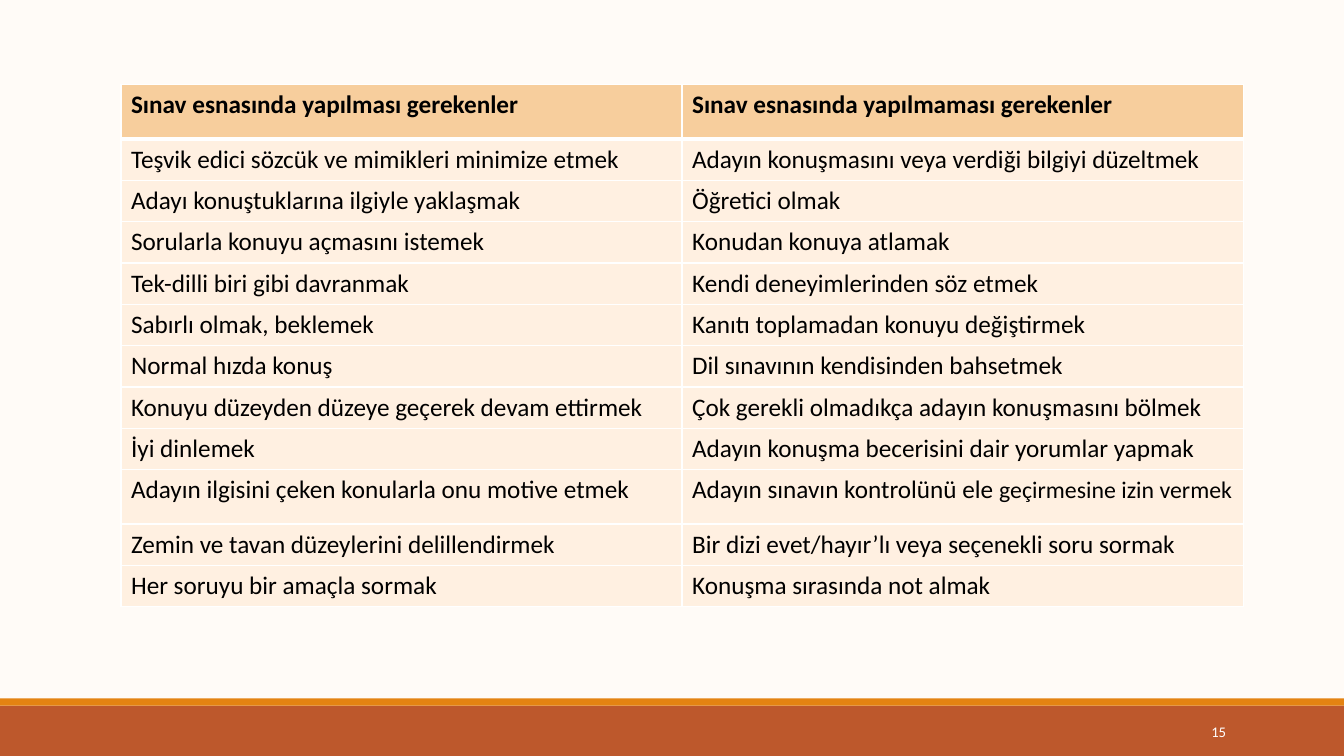
from dataclasses import dataclass

from lxml import etree
from pptx import Presentation
from pptx.dml.color import RGBColor
from pptx.enum.shapes import MSO_SHAPE
from pptx.enum.text import MSO_ANCHOR, PP_ALIGN
from pptx.oxml.ns import qn
from pptx.util import Inches, Pt

RECT = MSO_SHAPE.RECTANGLE
MIDDLE = MSO_ANCHOR.MIDDLE
RIGHT = PP_ALIGN.RIGHT


@dataclass(frozen=True)
class Theme:
    font: str = "Calibri"
    background: str = "FFFBF7"
    footer: str = "BD582C"
    accent: str = "E48312"
    header: str = "F7CE9D"
    body: str = "FFF0E1"
    ink: str = "000000"
    white: str = "FFFFFF"
    body_size: float = 18
    tight_size: float = 17
    number_size: float = 10.5
    rule: float = 1
    header_rule: float = 3


TIGHT_TEXT = "geçirmesine izin vermek"
ROWS = [
    ("Sınav esnasında yapılması gerekenler", "Sınav esnasında yapılmaması gerekenler"),
    ("Teşvik edici sözcük ve mimikleri minimize etmek",
     "Adayın konuşmasını veya verdiği bilgiyi düzeltmek"),
    ("Adayı konuştuklarına ilgiyle yaklaşmak", "Öğretici olmak"),
    ("Sorularla konuyu açmasını istemek", "Konudan konuya atlamak"),
    ("Tek-dilli biri gibi davranmak", "Kendi deneyimlerinden söz etmek"),
    ("Sabırlı olmak, beklemek", "Kanıtı toplamadan konuyu değiştirmek"),
    ("Normal hızda konuş", "Dil sınavının kendisinden bahsetmek"),
    ("Konuyu düzeyden düzeye geçerek devam ettirmek",
     "Çok gerekli olmadıkça adayın konuşmasını bölmek"),
    ("İyi dinlemek", "Adayın konuşma becerisini dair yorumlar yapmak"),
    ("Adayın ilgisini çeken konularla onu motive etmek",
     "Adayın sınavın kontrolünü ele " + TIGHT_TEXT),
    ("Zemin ve tavan düzeylerini delillendirmek",
     "Bir dizi evet/hayır’lı veya seçenekli soru sormak"),
    ("Her soruyu bir amaçla sormak", "Konuşma sırasında not almak"),
]
ROW_HEIGHT = 0.41
TALL_ROWS = {0: 0.54, 9: 0.54}


class SlideBuilder:
    def __init__(self, slide, theme):
        self.s = slide
        self.theme = theme
        fill = slide.background.fill
        fill.solid()
        fill.fore_color.rgb = RGBColor.from_string(theme.background)

    def bar(self, left, top, width, height, color):
        sp = self.s.shapes.add_shape(
            RECT, Inches(left), Inches(top), Inches(width), Inches(height))
        sp.shadow.inherit = False
        sp.fill.solid()
        sp.fill.fore_color.rgb = RGBColor.from_string(color)
        sp.line.fill.background()
        return sp

    def text(self, tf, text, size, color, bold=False):
        p = tf.paragraphs[0]
        p.font.name = self.theme.font
        p.font.size = Pt(size)
        p.font.bold = bold
        p.font.color.rgb = RGBColor.from_string(color)
        p.add_run().text = text
        return p

    def page_number(self, left, top, width, height, number):
        sp = self.bar(left, top, width, height, self.theme.footer)
        tf = sp.text_frame
        tf.vertical_anchor = MIDDLE
        p = self.text(tf, number, self.theme.number_size, self.theme.white)
        p.alignment = RIGHT

    def borders(self, cell, top, bottom):
        """Rule all four sides; top and bottom are widths in points."""
        rule = self.theme.rule
        tc_pr = cell._tc.get_or_add_tcPr()
        for side, width in (("L", rule), ("R", rule), ("T", top), ("B", bottom)):
            ln = etree.SubElement(tc_pr, qn("a:ln" + side), w=str(Pt(width)))
            fill = etree.SubElement(ln, qn("a:solidFill"))
            etree.SubElement(fill, qn("a:srgbClr"), val=self.theme.white)

    def cell(self, cell, text, row):
        theme = self.theme
        is_header = row == 0
        self.borders(cell,
                     top=theme.header_rule if row == 1 else theme.rule,
                     bottom=theme.header_rule if is_header else theme.rule)
        cell.fill.solid()
        cell.fill.fore_color.rgb = RGBColor.from_string(
            theme.header if is_header else theme.body)
        lead, tight, _ = text.partition(TIGHT_TEXT)
        p = self.text(cell.text_frame, lead, theme.body_size, theme.ink, is_header)
        if tight:
            r = p.add_run()
            r.text = tight
            r.font.size = Pt(theme.tight_size)

    def table(self, left, top, width, rows):
        heights = [TALL_ROWS.get(i, ROW_HEIGHT) for i in range(len(rows))]
        table = self.s.shapes.add_table(
            len(rows), len(rows[0]), Inches(left), Inches(top),
            Inches(width), Inches(sum(heights))).table
        table.horz_banding = False
        for i, (height, texts) in enumerate(zip(heights, rows)):
            table.rows[i].height = Inches(height)
            for j, text in enumerate(texts):
                self.cell(table.cell(i, j), text, i)


def main():
    prs = Presentation()
    prs.slide_width, prs.slide_height = Inches(13.33), Inches(7.5)
    theme = Theme()
    slide = SlideBuilder(prs.slides.add_slide(prs.slide_layouts[6]), theme)
    slide.bar(0, 7, 13.33, 0.5, theme.footer)
    slide.bar(0, 6.93, 13.33, 0.07, theme.accent)
    slide.table(1.2, 0.84, 11.13, ROWS)
    slide.page_number(10.83, 7.06, 1.43, 0.4, "15")
    prs.save("out.pptx")


if __name__ == "__main__":
    main()
